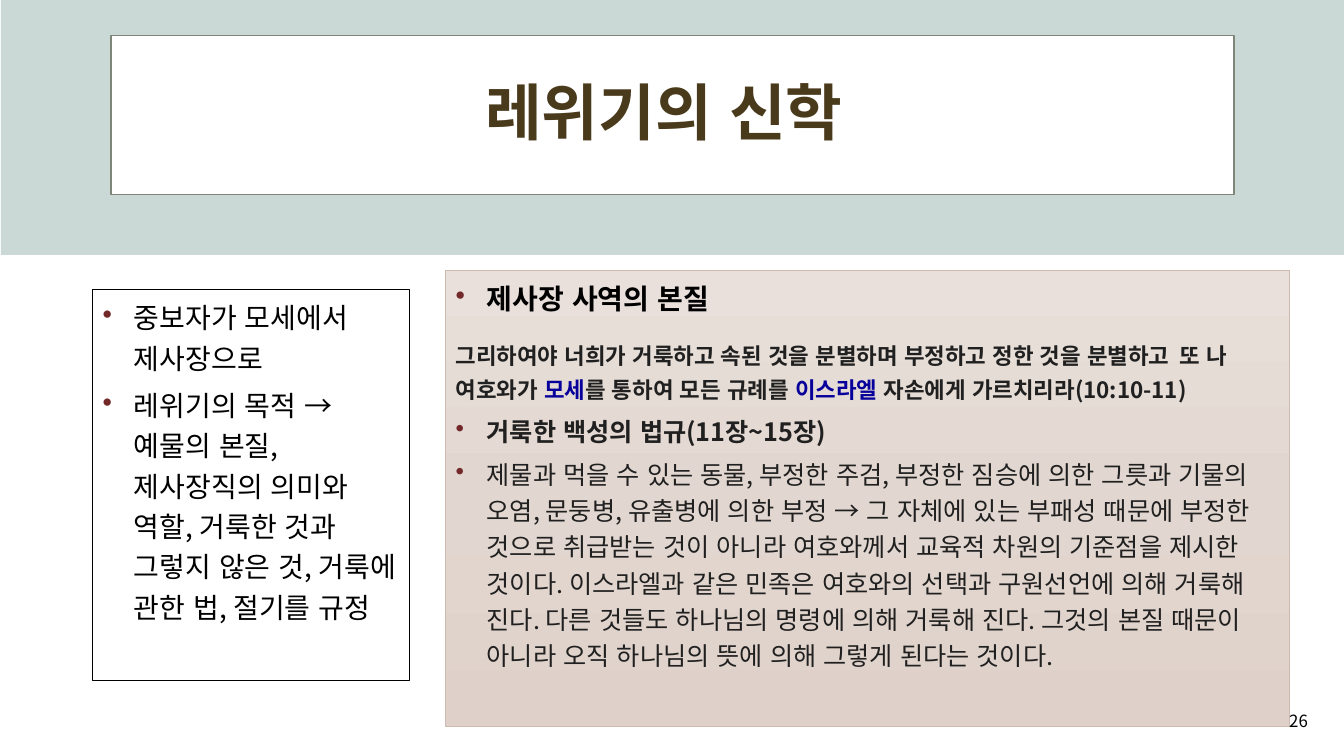
from copy import deepcopy
from dataclasses import dataclass

from lxml import etree
from pptx import Presentation
from pptx.dml.color import RGBColor
from pptx.enum.lang import MSO_LANGUAGE_ID
from pptx.enum.shapes import MSO_SHAPE
from pptx.enum.text import MSO_ANCHOR, MSO_AUTO_SIZE, PP_ALIGN
from pptx.oxml.ns import qn
from pptx.util import Inches, Pt

RECTANGLE = MSO_SHAPE.RECTANGLE
TOP, MIDDLE = MSO_ANCHOR.TOP, MSO_ANCHOR.MIDDLE
NO_FIT = MSO_AUTO_SIZE.NONE
LEFT, CENTER, RIGHT = PP_ALIGN.LEFT, PP_ALIGN.CENTER, PP_ALIGN.RIGHT
KOREAN = MSO_LANGUAGE_ID.KOREAN


@dataclass(frozen=True)
class Theme:
    font: str = "Noto Sans CJK KR"
    band: str = "CAD8D6"
    white: str = "FFFFFF"
    black: str = "000000"
    frame: str = "7E8679"
    title: str = "4A3A1C"
    bullet: str = "73292A"
    ink: str = "202020"
    name: str = "07009A"
    panel: tuple = ("E9E0DB", "E2D7D0", "DFD1C9")
    panel_line: str = "CEBBAF"
    title_size: int = 44
    gap_size: int = 24
    lead_size: int = 20
    body_size: int = 18
    verse_size: int = 16
    number_size: int = 12


THEME = Theme()


def color(code):
    return RGBColor.from_string(code)


def format_span(span, size, code, bold=False):
    span.font.name = THEME.font
    span.font.size = Pt(size)
    span.font.bold = bold
    span.font.color.rgb = color(code)
    span.font.language_id = KOREAN
    east_asian = etree.SubElement(span._r.get_or_add_rPr(), qn("a:ea"))
    east_asian.set("typeface", THEME.font)


def add_bullet(para):
    properties = para._p.get_or_add_pPr()
    properties.set("marL", str(Inches(0.31)))
    properties.set("indent", str(-Inches(0.31)))
    bullet_color = etree.SubElement(properties, qn("a:buClr"))
    etree.SubElement(bullet_color, qn("a:srgbClr")).set("val", THEME.bullet)
    etree.SubElement(properties, qn("a:buChar")).set("char", "•")


def fill_text(box, paragraphs):
    frame = box.text_frame
    frame.word_wrap = True
    frame.vertical_anchor = TOP
    for index, (bulleted, spans) in enumerate(paragraphs):
        para = frame.add_paragraph() if index else frame.paragraphs[0]
        if bulleted:
            add_bullet(para)
        para.alignment = LEFT
        para.line_spacing = 1.2
        para.space_before = Pt(5 if index else 0)
        for text, size, code, bold in spans:
            span = para.add_run()
            span.text = text
            format_span(span, size, code, bold)


def add_panel(page, left, top, width, height, fill, line=None, weight=1):
    box = page.shapes.add_shape(
        RECTANGLE, Inches(left), Inches(top), Inches(width), Inches(height))
    box.shadow.inherit = False
    if isinstance(fill, str):
        box.fill.solid()
        box.fill.fore_color.rgb = color(fill)
    else:
        fill_gradient(box, fill)
    if line:
        box.line.color.rgb = color(line)
        box.line.width = Pt(weight)
    else:
        box.line.fill.background()
    return box


def fill_gradient(box, codes):
    box.fill.gradient()
    box.fill.gradient_angle = 270
    stop_list = next(box.element.iter(qn("a:gsLst")))
    stop_list.insert(1, deepcopy(stop_list[0]))
    for index, (stop, code) in enumerate(zip(box.fill.gradient_stops, codes)):
        stop.position = index / (len(codes) - 1)
        stop.color.rgb = color(code)


def add_header(page, left, top, width, height):
    add_panel(page, left, top, width, height, THEME.band)
    frame = add_panel(page, left + 1.09, top + 0.35, 11.14, 1.58,
                      THEME.white, THEME.frame)
    title = page.shapes.title
    frame.element.addnext(title.element)
    title.left, title.top = Inches(left + 0.41), Inches(top + 0.42)
    title.width, title.height = Inches(12.5), Inches(1.45)
    title.text_frame.text = "레위기의 신학 "
    title.text_frame.auto_size = NO_FIT
    title.text_frame.vertical_anchor = MIDDLE
    para = title.text_frame.paragraphs[0]
    para.alignment = CENTER
    para.line_spacing = 0.9
    format_span(para.runs[0], THEME.title_size, THEME.title, True)


def add_purpose(page, left, top, width, height):
    box = add_panel(page, left, top, width, height, THEME.white, THEME.black)
    points = (
        "중보자가 모세에서 제사장으로",
        "레위기의 목적 → 예물의 본질, 제사장직의 의미와 역할, "
        "거룩한 것과 그렇지 않은 것, 거룩에 관한 법, 절기를 규정",
    )
    fill_text(box, [(True, [(point, THEME.lead_size, THEME.black, False)])
                    for point in points])


def add_ministry(page, left, top, width, height):
    box = add_panel(page, left, top, width, height, THEME.panel,
                    THEME.panel_line, 0.5)
    verse = [
        ("그리하여야 너희가 거룩하고 속된 것을 분별하며 부정하고 정한 것을 분별하고",
         THEME.verse_size, THEME.ink, True),
        (" ", THEME.gap_size, THEME.ink, True),
    ]
    verse += [(text, THEME.verse_size, code, True) for text, code in (
        ("또 나 여호와가 ", THEME.ink),
        ("모세", THEME.name),
        ("를 통하여 모든 규례를 ", THEME.ink),
        ("이스라엘", THEME.name),
        (" 자손에게 가르치리라(10:10-11)", THEME.ink),
    )]
    explanation = (
        "제물과 먹을 수 있는 동물, 부정한 주검, 부정한 짐승에 의한 그릇과 기물의 오염, "
        "문둥병, 유출병에 의한 부정 → 그 자체에 있는 부패성 때문에 부정한 것으로 "
        "취급받는 것이 아니라 여호와께서 교육적 차원의 기준점을 제시한 것이다. "
        "이스라엘과 같은 민족은 여호와의 선택과 구원선언에 의해 거룩해 진다. "
        "다른 것들도 하나님의 명령에 의해 거룩해 진다. 그것의 본질 때문이 아니라 "
        "오직 하나님의 뜻에 의해 그렇게 된다는 것이다."
    )
    fill_text(box, [
        (True, [("제사장 사역의 본질", THEME.lead_size, THEME.black, True)]),
        (False, verse),
        (True, [("거룩한 백성의 법규(11장~15장)", THEME.body_size, THEME.ink, True)]),
        (True, [(explanation, THEME.body_size, THEME.ink, False)]),
    ])


def add_page_number(page, left, top, width, height):
    box = page.shapes.add_textbox(
        Inches(left), Inches(top), Inches(width), Inches(height))
    box.text_frame.word_wrap = True
    box.text_frame.vertical_anchor = MIDDLE
    box.text_frame.text = "26"
    para = box.text_frame.paragraphs[0]
    para.alignment = RIGHT
    format_span(para.runs[0], THEME.number_size, THEME.black)


def main():
    deck = Presentation()
    deck.slide_width, deck.slide_height = Inches(13.33), Inches(7.5)
    page = deck.slides.add_slide(deck.slide_layouts[5])
    add_header(page, 0.01, 0, 13.33, 2.53)
    add_purpose(page, 0.92, 2.87, 3.14, 3.88)
    add_ministry(page, 4.42, 2.68, 8.37, 4.53)
    add_page_number(page, 10.07, 6.95, 3, 0.4)
    deck.save("out.pptx")


if __name__ == "__main__":
    main()
